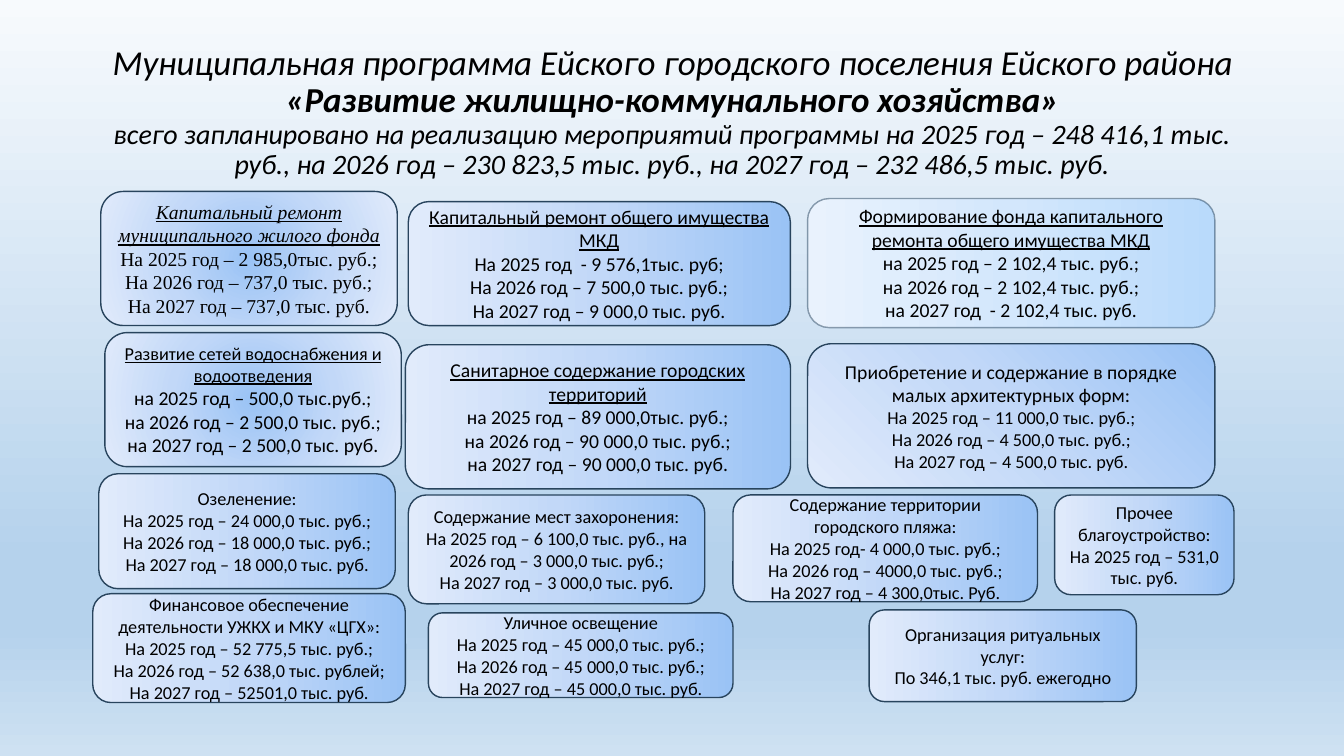
"""Builds a slide on the housing and utilities programme of a town settlement."""
from lxml.etree import SubElement
from pptx import Presentation
from pptx.dml.color import RGBColor
from pptx.enum.shapes import MSO_SHAPE
from pptx.enum.text import MSO_ANCHOR, PP_ALIGN
from pptx.oxml.ns import qn
from pptx.util import Inches, Pt

BLUE = [(0, "9AC3F5"), (50, "C2D8F8"), (100, "E1EBFB")]
PALE = [(0, "B9DAFB"), (50, "D3E7FC"), (100, "E9F2FD")]
SKY = [(0, "F7FAFD"), (74, "B5D2EC"), (83, "B5D2EC"), (100, "CEE1F2")]


def color(hex_string):
    return RGBColor.from_string(hex_string)


def set_gradient(fill, element, stops, angle):
    """Fill with stops along an angle, or outwards from the centre if it is None."""
    fill.gradient()
    gradient = next(element.iter(qn("a:gradFill")))
    for child in list(gradient):
        gradient.remove(child)
    stop_list = SubElement(gradient, qn("a:gsLst"))
    for position, hex_string in stops:
        stop = SubElement(stop_list, qn("a:gs"), pos=str(position * 1000))
        SubElement(stop, qn("a:srgbClr"), val=hex_string)
    if angle is None:
        path = SubElement(gradient, qn("a:path"), path="circle")
        SubElement(path, qn("a:fillToRect"), l="50000", t="50000", r="50000", b="50000")
    else:
        SubElement(gradient, qn("a:lin"), ang=str(angle * 60000), scaled="0")


presentation = Presentation()
presentation.slide_width = Inches(13.33)
presentation.slide_height = Inches(7.5)
column = presentation.slide_width / 100
row = presentation.slide_height / 100
slide = presentation.slides.add_slide(presentation.slide_layouts[6])
set_gradient(slide.background.fill, slide.element, SKY, 90)

title = slide.shapes.add_textbox(
    int(6.9 * column), int(1.87 * row), int(86.27 * column), int(26.13 * row))
title.text_frame.word_wrap = True
title.text_frame.vertical_anchor = MSO_ANCHOR.MIDDLE
paragraph = title.text_frame.paragraphs[0]
paragraph.alignment = PP_ALIGN.CENTER
paragraph.line_spacing = 0.9
paragraph.text = "Муниципальная программа Ейского городского поселения Ейского района "
paragraph.add_run().text = "«Развитие жилищно-коммунального хозяйства»"
paragraph.add_line_break()
paragraph.add_run().text = (
    "всего запланировано на реализацию мероприятий программы на 2025 год – 248 416,1 тыс. руб., "
    "на 2026 год – 230 823,5 тыс. руб., на 2027 год – 232 486,5 тыс. руб.")
for run, size, bold in zip(paragraph.runs, (25, 25, 20), (False, True, False)):
    run.font.name = "Calibri"
    run.font.size = Pt(size)
    run.font.bold = bold
    run.font.italic = True
    run.font.color.rgb = color("000000")

# Each card: left, top, width, height in shares; heading size, body size; options; lines
cards = [
    (60.09, 26.27, 30.31, 17.07, 14, 14, {"underline": True, "stops": PALE, "alpha": 49}, [
        "Формирование фонда капитального ремонта общего имущества МКД",
        "на 2025 год – 2 102,4 тыс. руб.;",
        "на 2026 год – 2 102,4 тыс. руб.;",
        "на 2027 год  - 2 102,4 тыс. руб."]),
    (7.5, 25.33, 22.06, 17.73, 14, 14,
     {"underline": True, "italic": True, "font": "Times New Roman", "angle": None}, [
        "Капитальный ремонт муниципального жилого фонда",
        "На 2025 год – 2 985,0тыс. руб.;",
        "На 2026 год – 737,0 тыс. руб.;",
        "На 2027 год – 737,0 тыс. руб."]),
    (30.38, 26.67, 28.43, 16.4, 14, 14, {"underline": True}, [
        "Капитальный ремонт общего имущества МКД",
        "На 2025 год  - 9 576,1тыс. руб;",
        "На 2026 год – 7 500,0 тыс. руб.;",
        "На 2027 год – 9 000,0 тыс. руб."]),
    (7.8, 44, 22.06, 17.73, 13, 14, {"underline": True, "angle": None}, [
        "Развитие сетей водоснабжения и водоотведения",
        "на 2025 год – 500,0 тыс.руб.;",
        "на 2026 год – 2 500,0 тыс. руб.;",
        "на 2027 год – 2 500,0 тыс. руб."]),
    (30.16, 45.6, 28.66, 19.07, 14, 14, {"underline": True}, [
        "Санитарное содержание городских территорий",
        "на 2025 год – 89 000,0тыс. руб.;",
        "на 2026 год – 90 000,0 тыс. руб.;",
        "на 2027 год – 90 000,0 тыс. руб."]),
    (60.09, 45.47, 30.31, 19.07, 14, 13, {"angle": 135}, [
        "Приобретение и содержание в порядке малых архитектурных форм:",
        "На 2025 год – 11 000,0 тыс. руб.;",
        "На 2026 год – 4 500,0 тыс. руб.;",
        "На 2027 год – 4 500,0 тыс. руб."]),
    (7.35, 62.67, 22.06, 15.2, 13, 13, {}, [
        "Озеленение:",
        "На 2025 год – 24 000,0 тыс. руб.;",
        "На 2026 год – 18 000,0 тыс. руб.;",
        "На 2027 год – 18 000,0 тыс. руб."]),
    (30.38, 65.47, 22.06, 14.4, 13, 13, {}, [
        "Содержание мест захоронения:",
        "На 2025 год – 6 100,0 тыс. руб., на 2026 год – 3 000,0 тыс. руб.;",
        "На 2027 год – 3 000,0 тыс. руб."]),
    (31.88, 81.07, 22.66, 11.2, 13, 13, {}, [
        "Уличное освещение",
        "На 2025 год – 45 000,0 тыс. руб.;",
        "На 2026 год – 45 000,0 тыс. руб.;",
        "На 2027 год – 45 000,0 тыс. руб."]),
    (54.54, 65.47, 22.66, 14.13, 13, 13, {}, [
        "Содержание территории городского пляжа:",
        "На 2025 год- 4 000,0 тыс. руб.;",
        "На 2026 год – 4000,0 тыс. руб.;",
        "На 2027 год – 4 300,0тыс. Руб."]),
    (6.9, 78.53, 23.26, 14.4, 13, 13, {}, [
        "Финансовое обеспечение деятельности УЖКХ и МКУ «ЦГХ»:",
        "На 2025 год – 52 775,5 тыс. руб.;",
        "На 2026 год – 52 638,0 тыс. рублей;",
        "На 2027 год – 52501,0 тыс. руб."]),
    (64.67, 80.67, 19.88, 12.13, 13, 13, {}, [
        "Организация ритуальных услуг:",
        "По 346,1 тыс. руб. ежегодно"]),
    (78.47, 65.47, 13.35, 13.2, 13, 13, {}, [
        "Прочее благоустройство:",
        "На 2025 год – 531,0 тыс. руб."]),
]

for left, top, width, height, heading_size, body_size, options, lines in cards:
    card = slide.shapes.add_shape(
        MSO_SHAPE.ROUNDED_RECTANGLE,
        int(left * column), int(top * row), int(width * column), int(height * row))
    card.shadow.inherit = False
    set_gradient(card.fill, card.element, options.get("stops", BLUE), options.get("angle", 180))
    card.line.color.rgb = color("28445D")
    card.line.width = Pt(1)
    if "alpha" in options:
        line_color = card.line._ln.find(qn("a:solidFill")).find(qn("a:srgbClr"))
        SubElement(line_color, qn("a:alpha"), val=str(options["alpha"] * 1000))
    card.text_frame.word_wrap = True
    card.text_frame.vertical_anchor = MSO_ANCHOR.MIDDLE
    card.text_frame.text = "\n".join(lines)
    for index, paragraph in enumerate(card.text_frame.paragraphs):
        is_heading = index == 0
        paragraph.alignment = PP_ALIGN.CENTER
        font = paragraph.runs[0].font
        font.name = options.get("font", "Calibri")
        font.size = Pt(heading_size if is_heading else body_size)
        font.color.rgb = color("000000")
        font.underline = is_heading and options.get("underline", False)
        font.italic = is_heading and options.get("italic", False)

presentation.save("out.pptx")
